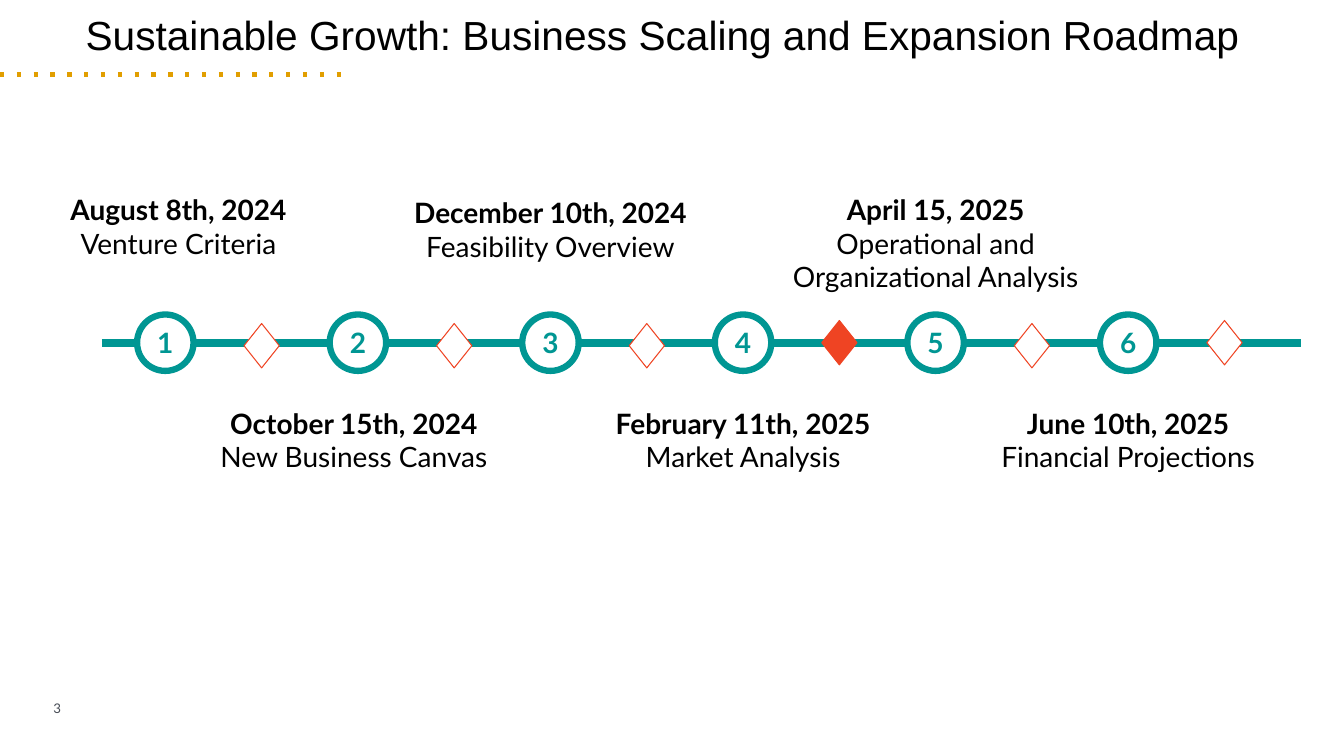
from dataclasses import dataclass

from lxml.etree import SubElement
from pptx import Presentation
from pptx.dml.color import RGBColor
from pptx.enum.shapes import MSO_CONNECTOR as Connector, MSO_SHAPE as Preset
from pptx.enum.text import MSO_ANCHOR as Anchor, PP_ALIGN as Align
from pptx.oxml.ns import qn
from pptx.util import Inches, Pt


@dataclass(frozen=True)
class Theme:
    teal: str = "009693"
    orange: str = "EF4423"
    gold: str = "E19E00"
    white: str = "FFFFFF"
    black: str = "000000"
    gray: str = "474C55"
    title_font: str = "Arial"
    body_font: str = "Lato"
    title_size: float = 29
    body_size: float = 20
    number_size: float = 9.5


class RoadmapSlide:
    def __init__(self, slide, theme):
        self.shapes = slide.shapes
        self.theme = theme

    def style(self, paragraph, size, color, font=None, bold=False):
        paragraph.font.name = font or self.theme.body_font
        paragraph.font.size = Pt(size)
        paragraph.font.bold = bold
        paragraph.font.color.rgb = RGBColor.from_string(color)

    def text_box(self, left, top, width, height, margins=(0, 0), anchor=Anchor.TOP):
        box = self.shapes.add_textbox(*map(Inches, (left, top, width, height)))
        frame = box.text_frame
        frame.word_wrap = True
        frame.vertical_anchor = anchor
        frame.margin_left = frame.margin_right = Inches(margins[0])
        frame.margin_top = frame.margin_bottom = Inches(margins[1])
        return frame

    def title(self, text):
        paragraph = self.text_box(0.85, 0.15, 11.63, 0.44).paragraphs[0]
        paragraph.text = text
        paragraph.line_spacing = 0.9
        self.style(paragraph, self.theme.title_size, self.theme.black, self.theme.title_font)

    def page_number(self, text):
        frame = self.text_box(0.53, 6.95, 1.14, 0.16, anchor=Anchor.MIDDLE)
        frame.text = text
        self.style(frame.paragraphs[0], self.theme.number_size, self.theme.gray)

    def horizontal_line(self, start, end, y, color, weight, dash=None):
        line = self.shapes.add_connector(
            Connector.STRAIGHT, Inches(start), Inches(y), Inches(end), Inches(y))
        line.line.color.rgb = RGBColor.from_string(color)
        line.line.width = Pt(weight)
        if dash:
            SubElement(line.get_or_add_ln(), qn("a:prstDash"), val=dash)
        SubElement(line._element.spPr, qn("a:effectLst"))

    def outlined_shape(self, preset, center, top, width, height, fill, outline, weight):
        shape = self.shapes.add_shape(
            preset, *map(Inches, (center - width / 2, top, width, height)))
        shape.shadow.inherit = False
        shape.fill.solid()
        shape.fill.fore_color.rgb = RGBColor.from_string(fill)
        shape.line.color.rgb = RGBColor.from_string(outline)
        shape.line.width = Pt(weight)
        return shape

    def step(self, number, center):
        circle = self.outlined_shape(
            Preset.OVAL, center, 3.12, 0.56, 0.56, self.theme.white, self.theme.teal, 4.5)
        frame = circle.text_frame
        frame.vertical_anchor = Anchor.MIDDLE
        frame.text = str(number)
        frame.paragraphs[0].alignment = Align.CENTER
        self.style(frame.paragraphs[0], self.theme.body_size, self.theme.teal, bold=True)

    def diamond(self, center, top, fill):
        self.outlined_shape(Preset.FLOWCHART_DECISION, center, top, 0.35, 0.44,
                            fill, self.theme.orange, 0.75)

    def label(self, center, top, width, height, date, topic):
        frame = self.text_box(center - width / 2, top, width, height, (0.1, 0.05))
        frame.text = f"{date}\n{topic}"
        for paragraph, bold in zip(frame.paragraphs, (True, False)):
            paragraph.alignment = Align.CENTER
            self.style(paragraph, self.theme.body_size, self.theme.black, bold=bold)


FIRST_CENTER, PITCH = 1.64, 1.91

# Label shift from its step, top, width, height, date, topic
MILESTONES = [
    (0.13, 1.86, 2.69, 1.01, "August 8th, 2024", "Venture Criteria"),
    (-0.04, 3.98, 2.94, 0.77, "October 15th, 2024", "New Business Canvas"),
    (0, 1.89, 3.21, 0.77, "December 10th, 2024", "Feasibility Overview"),
    (0, 3.98, 2.94, 0.77, "February 11th, 2025", "Market Analysis"),
    (0, 1.86, 3.29, 1.11, "April 15, 2025", "Operational and Organizational Analysis"),
    (0, 3.98, 2.87, 0.77, "June 10th, 2025", "Financial Projections"),
]
CURRENT_STEP = 4
RAISED_DIAMONDS = (4, 6)


def main():
    presentation = Presentation()
    presentation.slide_width, presentation.slide_height = Inches(13.33), Inches(7.5)
    theme = Theme()
    roadmap = RoadmapSlide(
        presentation.slides.add_slide(presentation.slide_layouts[6]), theme)

    # Heading and page number
    roadmap.page_number("3")
    roadmap.title("Sustainable Growth: Business Scaling and Expansion Roadmap")
    roadmap.horizontal_line(0, 3.45, 0.74, theme.gold, 3, dash="dot")

    # Timeline with steps, labels and the diamonds halfway between steps
    roadmap.horizontal_line(1.01, 12.9, 3.4, theme.teal, 6)
    for number, (shift, *label) in enumerate(MILESTONES, start=1):
        center = FIRST_CENTER + (number - 1) * PITCH
        roadmap.step(number, center)
        roadmap.label(center + shift, *label)
        roadmap.diamond(center + PITCH / 2,
                        3.18 if number in RAISED_DIAMONDS else 3.21,
                        theme.orange if number == CURRENT_STEP else theme.white)

    presentation.save("out.pptx")


if __name__ == "__main__":
    main()
